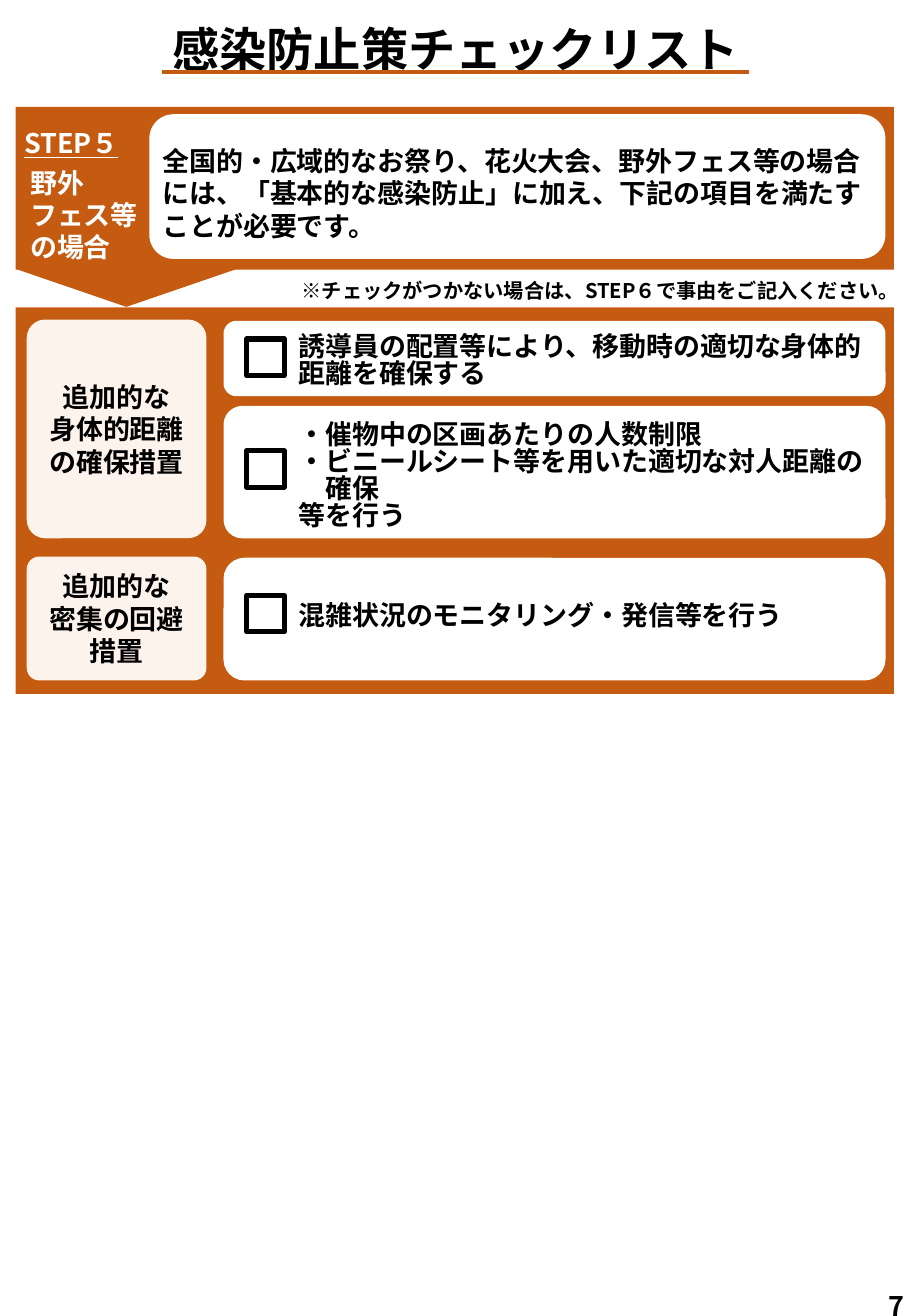
from dataclasses import dataclass

from pptx import Presentation
from pptx.dml.color import RGBColor
from pptx.enum.shapes import MSO_CONNECTOR, MSO_SHAPE
from pptx.enum.text import MSO_ANCHOR, MSO_AUTO_SIZE, PP_ALIGN
from pptx.oxml.ns import qn
from pptx.util import Inches, Pt
from lxml.etree import SubElement

ORANGE = RGBColor(0xC5, 0x5A, 0x11)
CREAM = RGBColor(0xFD, 0xF3, 0xED)
WHITE = RGBColor(0xFF, 0xFF, 0xFF)
BLACK = RGBColor(0x00, 0x00, 0x00)
FONT = "Noto Sans CJK JP"
CELL = Inches(0.1)
COLUMNS, ROWS = 75, 108.3


@dataclass
class Box:
    """A rectangle measured in grid cells."""
    left: float
    top: float
    width: float
    height: float

    def inner(self, left, top, width, height):
        """Return a box placed relative to this one."""
        return Box(self.left + left, self.top + top, width, height)

    def lengths(self):
        """Return left, top, width and height as slide lengths."""
        return [round(value * CELL) for value in (self.left, self.top, self.width, self.height)]


def style_text(frame, lines, size=16, color=BLACK, align=PP_ALIGN.LEFT, spacing=None):
    """Fill a text frame with one bold paragraph per line."""
    frame.word_wrap = True
    frame.auto_size = MSO_AUTO_SIZE.NONE
    frame.text = "\n".join(lines)
    for para in frame.paragraphs:
        para.alignment = align
        para.line_spacing = spacing
        for span in para.runs:
            span.font.name = FONT
            span.font.size = Pt(size)
            span.font.bold = True
            span.font.color.rgb = color
            SubElement(span.font._element, qn("a:ea"), typeface=FONT)


def indent(para, length):
    """Set the left margin of a paragraph."""
    properties = para._p.get_or_add_pPr()
    properties.set("marL", str(int(length)))
    properties.set("indent", "0")


def add_text(slide, box, lines, **style):
    """Add a text box and return its frame."""
    frame = slide.shapes.add_textbox(*box.lengths()).text_frame
    style_text(frame, lines, **style)
    return frame


def add_panel(slide, box, fill, kind=MSO_SHAPE.RECTANGLE, corner=None):
    """Add a plain filled shape without an outline."""
    panel = slide.shapes.add_shape(kind, *box.lengths())
    panel.shadow.inherit = False
    panel.fill.solid()
    panel.fill.fore_color.rgb = fill
    panel.line.fill.background()
    if corner is not None:
        panel.adjustments[0] = corner
    return panel


def add_title(slide, box, text):
    """Place the title and its rule."""
    title = slide.shapes.title
    title.left, title.top, title.width, title.height = box.lengths()
    title.text_frame.vertical_anchor = MSO_ANCHOR.TOP
    style_text(title.text_frame, [text], size=28, align=PP_ALIGN.CENTER)
    left, top, width, _ = box.inner(8.5, 4.7, 48.4, 0).lengths()
    rule = slide.shapes.add_connector(MSO_CONNECTOR.STRAIGHT, left, top, left + width, top)
    rule.line.color.rgb = ORANGE
    rule.line.width = Pt(2.25)
    SubElement(rule._element.spPr, qn("a:effectLst"))


def add_step(slide, box, step, case, summary):
    """Draw the step banner with its downward pointer."""
    pointer = add_panel(slide, box.inner(6, 4.3, 6.2, 18.1), ORANGE, MSO_SHAPE.PENTAGON)
    pointer.rotation = 90
    add_panel(slide, box, ORANGE)
    add_panel(slide, box.inner(11, 0.6, 60.6, 11.9), WHITE, MSO_SHAPE.ROUNDED_RECTANGLE)
    frame = add_text(slide, box.inner(-0.3, 1.1, 11.9, 12.3), [step, *case], color=WHITE)
    heading, *case_paras = frame.paragraphs
    heading.runs[0].font.underline = True
    heading.space_after = Pt(4.4)
    for para in case_paras:
        indent(para, Pt(3.6))
    add_text(slide, box.inner(11.1, 2.6, 61.4, 9.1), [summary])


def add_measure(slide, box, label, items):
    """Draw a label card and the checkbox cards beside it."""
    card = add_panel(slide, box.inner(0, 0, 14.8, box.height), CREAM,
                     MSO_SHAPE.ROUNDED_RECTANGLE, 0.102)
    frame = card.text_frame
    frame.margin_left = frame.margin_right = Inches(0.07)
    frame.margin_top = frame.margin_bottom = Inches(0.04)
    frame.vertical_anchor = MSO_ANCHOR.MIDDLE
    style_text(frame, label, align=PP_ALIGN.CENTER)
    for top, height, corner, check_top, text_top, lines, indented in items:
        item = box.inner(16.2, top, 54.5, height)
        add_panel(slide, item, WHITE, MSO_SHAPE.ROUNDED_RECTANGLE, corner)
        check = slide.shapes.add_shape(MSO_SHAPE.RECTANGLE,
                                       *item.inner(1.9, check_top, 3.1, 3).lengths())
        check.shadow.inherit = False
        check.fill.background()
        check.line.color.rgb = BLACK
        check.line.width = Pt(3)
        text_box = item.inner(5.2, text_top, 51.4, 1.2 + 2.2 * len(lines))
        frame = add_text(slide, text_box, lines, spacing=Pt(16))
        for number in indented:
            indent(frame.paragraphs[number], Pt(16))


def add_checklist(slide, box):
    """Draw the orange panel and its two measures."""
    add_panel(slide, box, ORANGE)
    add_measure(slide, box.inner(0.9, 1, 70.7, 18), ["追加的な", "身体的距離の確保措置"], [
        (0.1, 6.2, 0.171, 1.5, 0.7,
         ["誘導員の配置等により、移動時の適切な身体的", "距離を確保する"], []),
        (7.1, 10.9, 0.142, 3.7, 0.9,
         ["・催物中の区画あたりの人数制限", "・ビニールシート等を用いた適切な対人距離の",
          "確保", "等を行う"], [2]),
    ])
    add_measure(slide, box.inner(0.9, 20.5, 70.7, 10.2), ["追加的な", "密集の回避", "措置"], [
        (0.1, 10.1, 0.171, 3.1, 3.3, ["混雑状況のモニタリング・発信等を行う"], []),
    ])


def add_page_number(slide, box, number):
    """Write the page number in the bottom corner."""
    frame = add_text(slide, box, [number])
    frame.margin_right = 0


def main():
    """Build the checklist slide and save it."""
    deck = Presentation()
    deck.slide_width = round(COLUMNS * CELL)
    deck.slide_height = round(ROWS * CELL)
    slide = deck.slides.add_slide(deck.slide_layouts[5])
    add_title(slide, Box(4.8, 1.2, 65.4, 5.7), "感染防止策チェックリスト")
    add_step(slide, Box(1.3, 8.8, 72.3, 13.4), "STEP５", ["野外", "フェス等", "の場合"],
             "全国的・広域的なお祭り、花火大会、野外フェス等の場合には、"
             "「基本的な感染防止」に加え、下記の項目を満たすことが必要です。")
    add_checklist(slide, Box(1.3, 25.3, 72.3, 31.8))
    add_text(slide, Box(21.2, 22.2, 53.8, 3.3),
             ["※チェックがつかない場合は、STEP６で事由をご記入ください。"],
             size=12, align=PP_ALIGN.RIGHT, spacing=Pt(16))
    add_page_number(slide, Box(72.2, 105.6, 2.8, 2.7), "7")
    deck.save("out.pptx")


if __name__ == "__main__":
    main()
